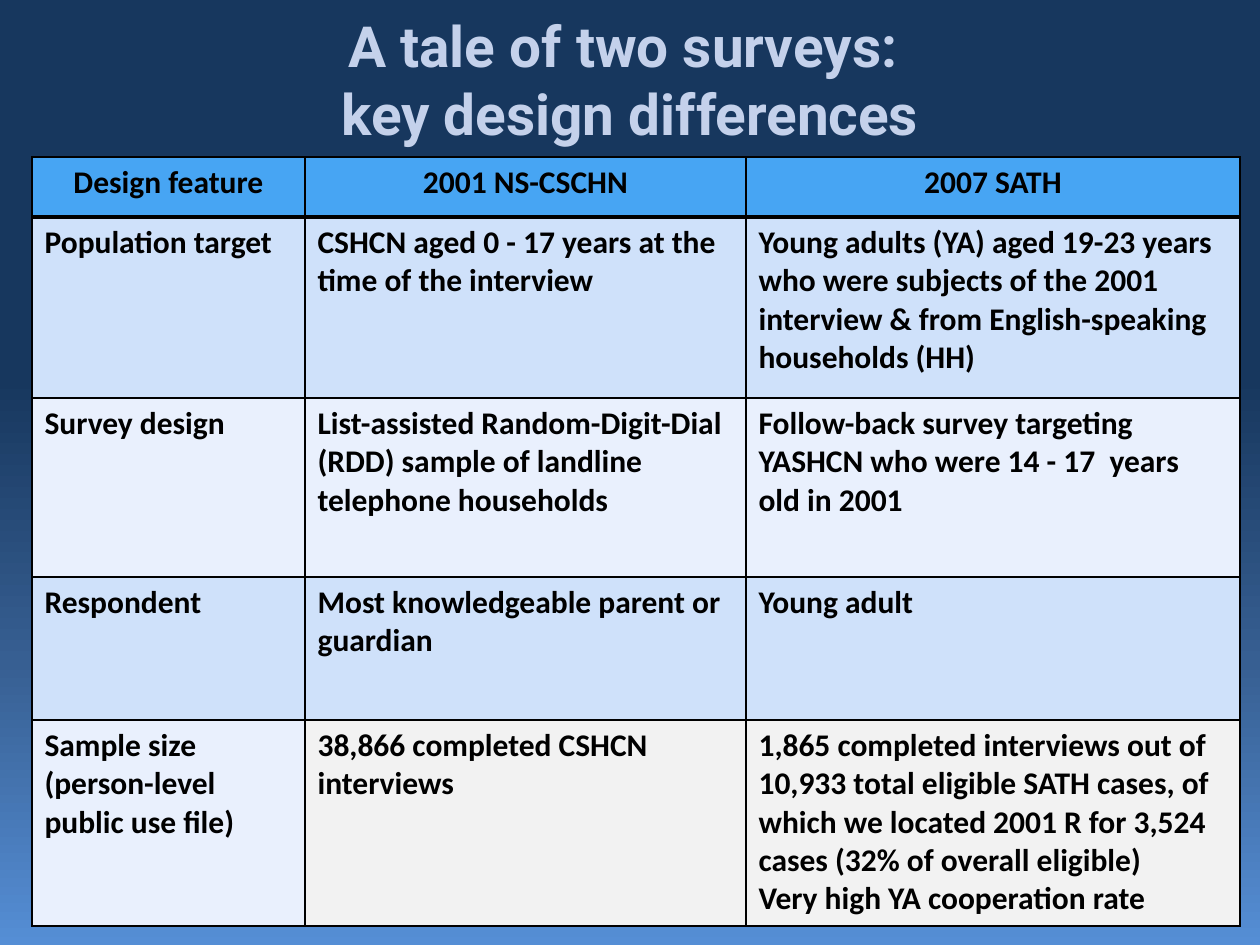
from dataclasses import dataclass

from lxml.etree import SubElement
from pptx import Presentation
from pptx.dml.color import RGBColor
from pptx.enum.text import MSO_ANCHOR as Anchor, MSO_AUTO_SIZE as AutoSize, PP_ALIGN as Align
from pptx.oxml.ns import qn
from pptx.util import Emu, Pt

EMU_PER_PX = 914400 / 126
HEADER, BAND, PALE, GREY = "47A5F3", "CFE1FA", "E9F0FD", "F2F2F2"
BLACK = "000000"
TITLE_FORMAT = {"name": "Roboto", "size": Pt(32.4), "bold": True}
CELL_FORMAT = {"name": "Calibri", "size": Pt(18), "bold": True}
BACKGROUND_STOPS = [(0, "17375E"), (40, "17375E"), (70, "375F92"), (100, "558ED5")]
COLUMN_WIDTHS = [273, 441, 494]


@dataclass
class SurveyRow:
    height: int
    texts: tuple[str, str, str]
    fills: tuple[str, str, str]
    align: Align = Align.LEFT
    top_line: float = 1
    bottom_line: float = 1


ROWS = [
    SurveyRow(60, ("Design feature", "2001 NS-CSCHN", "2007 SATH"),
              (HEADER,) * 3, Align.CENTER, bottom_line=3),
    SurveyRow(181, (
        "Population target",
        "CSHCN aged 0 - 17 years at the time of the interview",
        "Young adults (YA) aged 19-23 years who were subjects of the 2001 "
        "interview & from English-speaking households (HH)"),
        (BAND,) * 3, top_line=3),
    SurveyRow(179, (
        "Survey design",
        "List-assisted Random-Digit-Dial (RDD) sample of landline telephone households",
        "Follow-back survey targeting YASHCN who were 14 - 17  years old in 2001"),
        (PALE,) * 3),
    SurveyRow(143, (
        "Respondent", "Most knowledgeable parent or guardian", "Young adult"),
        (BAND,) * 3),
    SurveyRow(206, (
        "Sample size (person-level public use file)",
        "38,866 completed CSHCN interviews",
        "1,865 completed interviews out of\n"
        "10,933 total eligible SATH cases, of which we located 2001 R for 3,524 "
        "cases (32% of overall eligible)\n"
        "Very high YA cooperation rate"),
        (PALE, GREY, GREY)),
]


def px(length: int) -> Emu:
    return Emu(round(length * EMU_PER_PX))


def color(value: str) -> RGBColor:
    return RGBColor.from_string(value)


def format_text(frame, text: str, formats: dict, text_color: str, align: Align) -> None:
    frame.text = text
    for para in frame.paragraphs:
        para.alignment = align
        for span in para.runs:
            for name, value in formats.items():
                setattr(span.font, name, value)
            span.font.color.rgb = color(text_color)


def paint_background(page) -> None:
    fill = page.background.fill
    fill.gradient()
    fill.gradient_angle = 270
    stops = page.element.find(".//" + qn("a:gsLst"))
    for stop in list(stops):
        stops.remove(stop)
    for position, value in BACKGROUND_STOPS:
        stop = SubElement(stops, qn("a:gs"), pos=str(position * 1000))
        SubElement(stop, qn("a:srgbClr"), val=value)


def add_borders(cell, row: SurveyRow) -> None:
    properties = cell._tc.get_or_add_tcPr()
    widths = {"L": 1, "R": 1, "T": row.top_line, "B": row.bottom_line}
    for index, (side, width) in enumerate(widths.items()):
        line = SubElement(properties, qn(f"a:ln{side}"), w=str(int(Pt(width))))
        fill = SubElement(line, qn("a:solidFill"))
        SubElement(fill, qn("a:srgbClr"), val=BLACK)
        # Borders come before the fill in the cell properties
        properties.insert(index, line)


def add_title(page) -> None:
    box = page.shapes.title
    box.left, box.top, box.width, box.height = map(px, (63, 0, 1134, 157))
    frame = box.text_frame
    frame.auto_size = AutoSize.NONE
    frame.vertical_anchor = Anchor.MIDDLE
    format_text(frame, "A tale of two surveys: \vkey design differences",
                TITLE_FORMAT, "C4D1EB", Align.CENTER)


def add_survey_table(page) -> None:
    height = sum(row.height for row in ROWS)
    table = page.shapes.add_table(len(ROWS), len(COLUMN_WIDTHS), px(32), px(157),
                                  px(sum(COLUMN_WIDTHS)), px(height)).table
    for column, width in zip(table.columns, COLUMN_WIDTHS):
        column.width = px(width)
    for table_row, row in zip(table.rows, ROWS):
        table_row.height = px(row.height)
        for cell, text, fill in zip(table_row.cells, row.texts, row.fills):
            cell.fill.solid()
            cell.fill.fore_color.rgb = color(fill)
            add_borders(cell, row)
            format_text(cell.text_frame, text, CELL_FORMAT, BLACK, row.align)


def main() -> None:
    deck = Presentation()
    deck.slide_width, deck.slide_height = px(1260), px(945)
    page = deck.slides.add_slide(deck.slide_layouts[5])
    paint_background(page)
    add_title(page)
    add_survey_table(page)
    deck.save("out.pptx")


if __name__ == "__main__":
    main()
